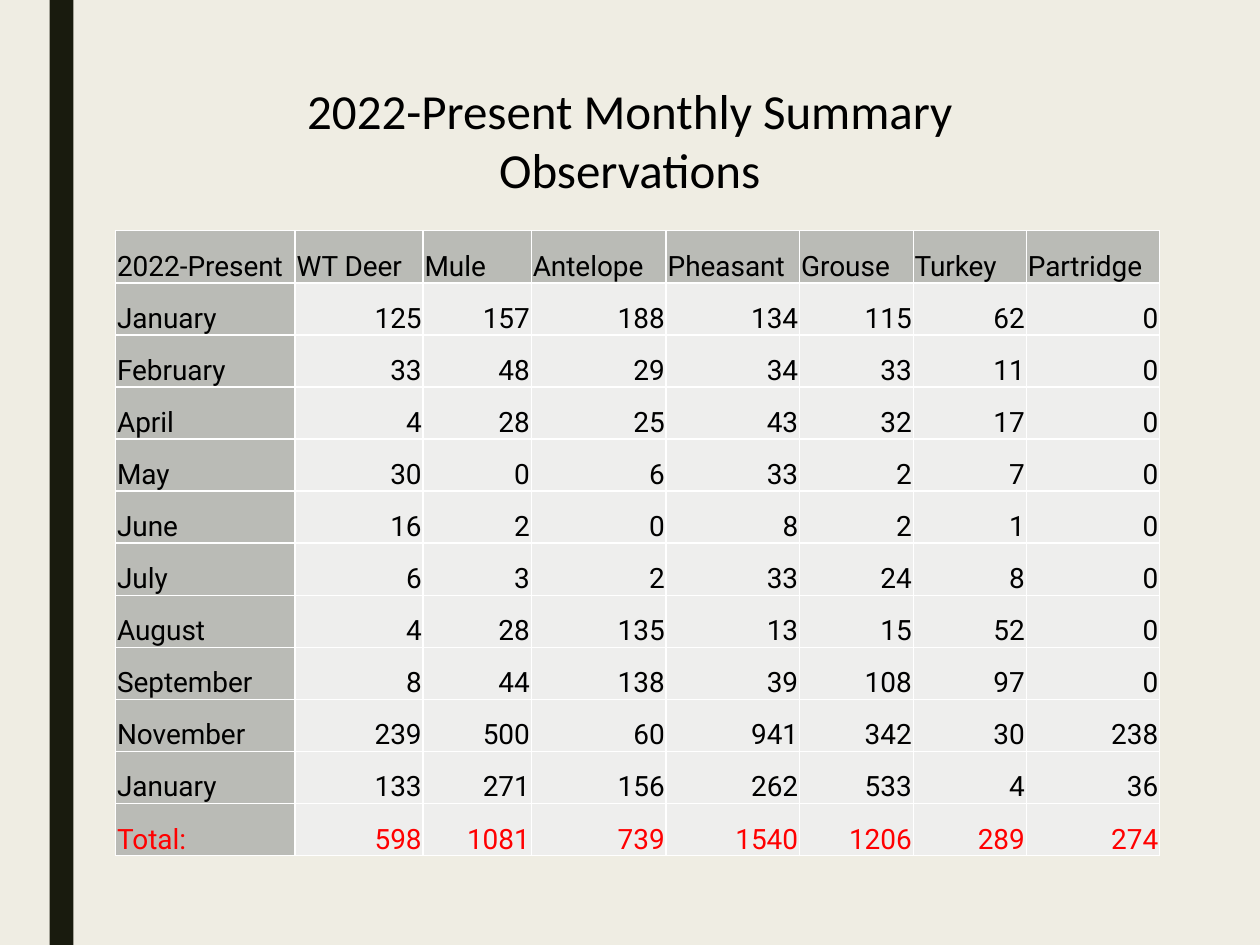
from lxml import etree
from pptx import Presentation
from pptx import util as u
from pptx.dml.color import RGBColor
from pptx.enum import shapes, text
from pptx.oxml import ns

# Content
TITLE = "2022-Present Monthly Summary Observations"
HEADER = ["2022-Present", "WT Deer", "Mule", "Antelope", "Pheasant", "Grouse", "Turkey", "Partridge"]
MONTHS = [
    ("January", 125, 157, 188, 134, 115, 62, 0),
    ("February", 33, 48, 29, 34, 33, 11, 0),
    ("April", 4, 28, 25, 43, 32, 17, 0),
    ("May", 30, 0, 6, 33, 2, 7, 0),
    ("June", 16, 2, 0, 8, 2, 1, 0),
    ("July", 6, 3, 2, 33, 24, 8, 0),
    ("August", 4, 28, 135, 13, 15, 52, 0),
    ("September", 8, 44, 138, 39, 108, 97, 0),
    ("November", 239, 500, 60, 941, 342, 30, 238),
    ("January", 133, 271, 156, 262, 533, 4, 36),
]
COLUMN_WIDTHS = [3.62, 2.58, 2.18, 2.72, 2.69, 2.29, 2.28, 2.69]
ROW_HEIGHT = 1.05

# Colours
BACKGROUND = RGBColor(0xEF, 0xED, 0xE3)
BAR = RGBColor(0x19, 0x1B, 0x0E)
HEADING_FILL = RGBColor(0xBA, 0xBB, 0xB6)
BODY_FILL = RGBColor(0xEE, 0xEE, 0xED)
BORDER = RGBColor(0xFF, 0xFF, 0xFF)
BLACK = RGBColor(0, 0, 0)
RED = RGBColor(0xFF, 0, 0)


def write(frame, content, font, size, color=BLACK, align=text.PP_ALIGN.LEFT):
    paragraph = frame.paragraphs[0]
    paragraph.alignment = align
    run = paragraph.add_run()
    run.text = content
    run.font.name = font
    run.font.size = u.Pt(size)
    run.font.color.rgb = color


def add_borders(cell):
    properties = cell._tc.get_or_add_tcPr()
    for side in ("lnL", "lnR", "lnT", "lnB"):
        line = etree.SubElement(properties, ns.qn(f"a:{side}"), w=str(u.Pt(1)))
        fill = etree.SubElement(line, ns.qn("a:solidFill"))
        etree.SubElement(fill, ns.qn("a:srgbClr"), val=str(BORDER))


def add_side_bar(slide, height):
    bar = slide.shapes.add_shape(shapes.MSO_SHAPE.RECTANGLE, u.Cm(1), 0, u.Cm(0.48), height)
    bar.shadow.inherit = False
    bar.fill.solid()
    bar.fill.fore_color.rgb = BAR
    bar.line.fill.background()


def add_title(slide):
    box = slide.shapes.add_textbox(u.Cm(5.61), u.Cm(1.5), u.Cm(14.17), u.Cm(2.64))
    box.text_frame.word_wrap = True
    write(box.text_frame, TITLE, "Calibri", 28, align=text.PP_ALIGN.CENTER)


def add_observations(slide):
    totals = [sum(counts) for counts in list(zip(*MONTHS))[1:]]
    rows = [HEADER, *MONTHS, ["Total:", *totals]]
    table = slide.shapes.add_table(
        len(rows), len(HEADER), u.Cm(2.33), u.Cm(4.65),
        u.Cm(sum(COLUMN_WIDTHS)), u.Cm(ROW_HEIGHT * len(rows))).table
    for column, width in zip(table.columns, COLUMN_WIDTHS):
        column.width = u.Cm(width)

    for r, values in enumerate(rows):
        table.rows[r].height = u.Cm(ROW_HEIGHT)
        for c, value in enumerate(values):
            cell = table.cell(r, c)
            heading = r == 0 or c == 0
            cell.margin_left = cell.margin_right = cell.margin_top = u.Cm(0.03)
            cell.margin_bottom = 0
            cell.vertical_anchor = text.MSO_ANCHOR.BOTTOM
            add_borders(cell)
            cell.fill.solid()
            cell.fill.fore_color.rgb = HEADING_FILL if heading else BODY_FILL
            write(cell.text_frame, str(value), "Roboto", 16,
                  color=RED if r == len(rows) - 1 else BLACK,
                  align=text.PP_ALIGN.LEFT if heading else text.PP_ALIGN.RIGHT)


def main():
    presentation = Presentation()
    presentation.slide_width = u.Cm(25.4)
    presentation.slide_height = u.Cm(19.05)
    slide = presentation.slides.add_slide(presentation.slide_layouts[6])
    slide.background.fill.solid()
    slide.background.fill.fore_color.rgb = BACKGROUND
    add_side_bar(slide, presentation.slide_height)
    add_title(slide)
    add_observations(slide)
    presentation.save("out.pptx")


if __name__ == "__main__":
    main()
